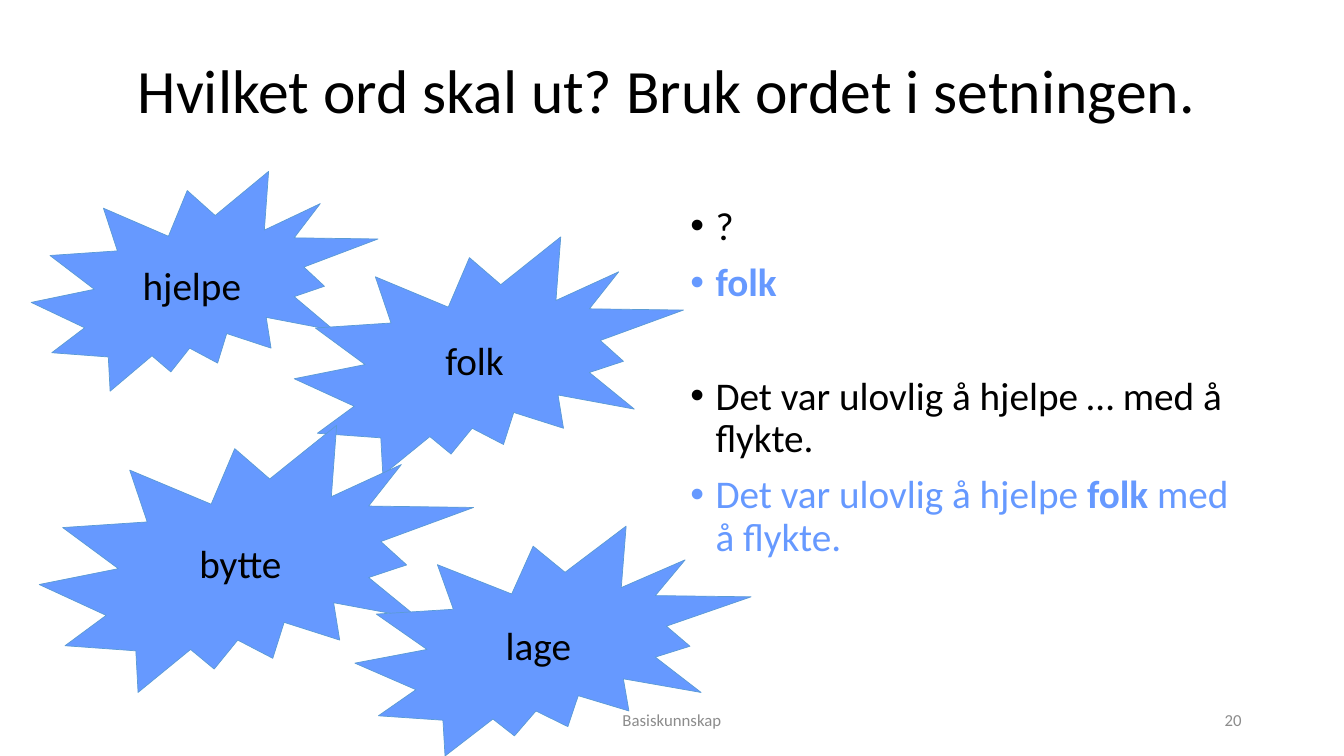
from lxml import etree
from pptx import Presentation
from pptx.dml.color import RGBColor
from pptx.enum.shapes import MSO_SHAPE
from pptx.enum.text import MSO_ANCHOR, PP_ALIGN
from pptx.oxml.ns import qn
from pptx.util import Pt

BURST = MSO_SHAPE.EXPLOSION2
TOP, MIDDLE = MSO_ANCHOR.TOP, MSO_ANCHOR.MIDDLE
LEFT, CENTER, RIGHT = PP_ALIGN.LEFT, PP_ALIGN.CENTER, PP_ALIGN.RIGHT
COLORS = {"text": "000000", "answer": "6699FF", "outline": "5B9BD5", "footer": "8C8C8C"}


class WordSlide:
    font = "Calibri"
    word_size = 28
    indent = 18

    def __init__(self, slide):
        self.slide = slide

    def color(self, name):
        return RGBColor.from_string(COLORS[name])

    def run(self, paragraph, text, size, color="text", bold=False):
        run = paragraph.add_run()
        run.text = text
        run.font.name = self.font
        run.font.size = Pt(size)
        run.font.bold = bold
        run.font.color.rgb = self.color(color)

    def frame(self, box, anchor=MIDDLE):
        frame = box.text_frame
        frame.word_wrap = True
        frame.vertical_anchor = anchor
        return frame

    def textbox(self, place, anchor=MIDDLE):
        box = self.slide.shapes.add_textbox(*map(Pt, place))
        return self.frame(box, anchor)

    def line(self, place, text, size, color="text", align=LEFT):
        """Add a text box that holds a single run."""
        paragraph = self.textbox(place).paragraphs[0]
        paragraph.alignment = align
        paragraph.line_spacing = 0.9
        self.run(paragraph, text, size, color)

    def burst(self, place, word):
        seal = self.slide.shapes.add_shape(BURST, *map(Pt, place))
        seal.shadow.inherit = False
        seal.fill.solid()
        seal.fill.fore_color.rgb = self.color("answer")
        seal.line.color.rgb = self.color("outline")
        seal.line.width = Pt(0.5)
        paragraph = self.frame(seal).paragraphs[0]
        paragraph.alignment = CENTER
        self.run(paragraph, word, self.word_size)

    def bullets(self, place, items):
        """Each item is (space before, colour, [(text, bold), ...])."""
        frame = self.textbox(place, TOP)
        for number, (space, color, parts) in enumerate(items):
            paragraph = frame.add_paragraph() if number else frame.paragraphs[0]
            paragraph.line_spacing = 0.9
            paragraph.space_before = Pt(space)
            properties = paragraph._p.get_or_add_pPr()
            properties.set("marL", str(Pt(self.indent)))
            properties.set("indent", str(-Pt(self.indent)))
            etree.SubElement(properties, qn("a:buFont")).set("typeface", "Arial")
            etree.SubElement(properties, qn("a:buChar")).set("char", "•")
            for text, bold in parts:
                self.run(paragraph, text, self.word_size, color, bold)


def main():
    deck = Presentation()
    deck.slide_width, deck.slide_height = Pt(960), Pt(540)
    page = WordSlide(deck.slides.add_slide(deck.slide_layouts[6]))

    page.line((91.4, 14.4, 828, 104.4), "Hvilket ord skal ut? Bruk ordet i setningen.", 44)
    page.bullets((486, 144, 408, 342.7), [
        (10, "text", [("?", False)]),
        (10, "answer", [("folk", True)]),
        (50.7, "text", [("Det var ulovlig å hjelpe … med å flykte.", False)]),
        (10, "answer", [("Det var ulovlig å hjelpe ", False), ("folk ", True),
                        ("med å flykte.", False)]),
    ])
    page.line((678, 500.5, 216, 28.75), "20", 12, "footer", RIGHT)

    words = {
        "hjelpe": (22.3, 122.4, 247.7, 157),
        "folk": (210.2, 169.2, 278, 170),
        "bytte": (28, 303.8, 310.3, 190.8),
        "lage": (253.5, 375.8, 283, 164.2),
    }
    for word, place in words.items():
        page.burst(place, word)

    page.line((318, 500.5, 324, 28.75), "Basiskunnskap", 12, "footer", CENTER)
    deck.save("out.pptx")


if __name__ == "__main__":
    main()
